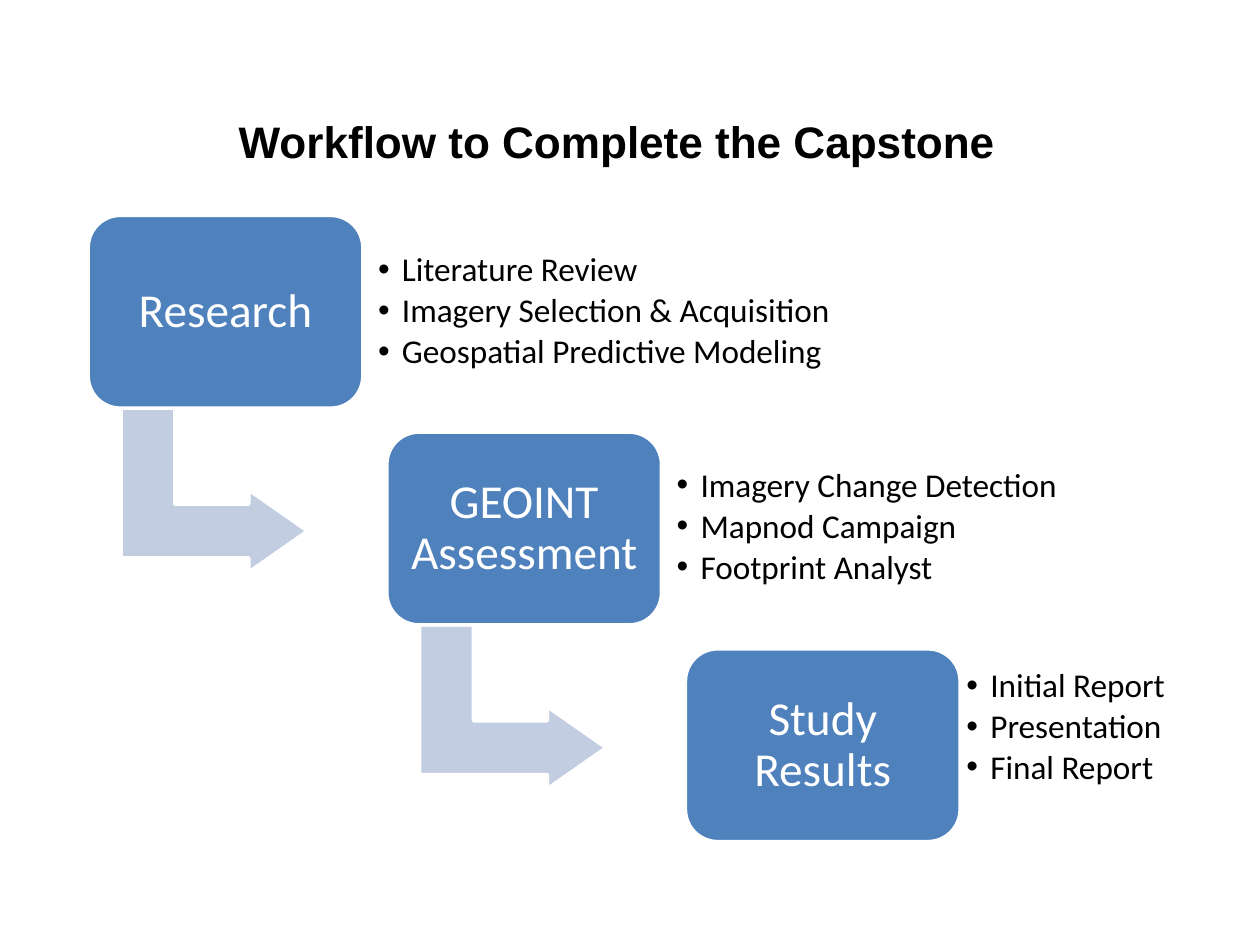
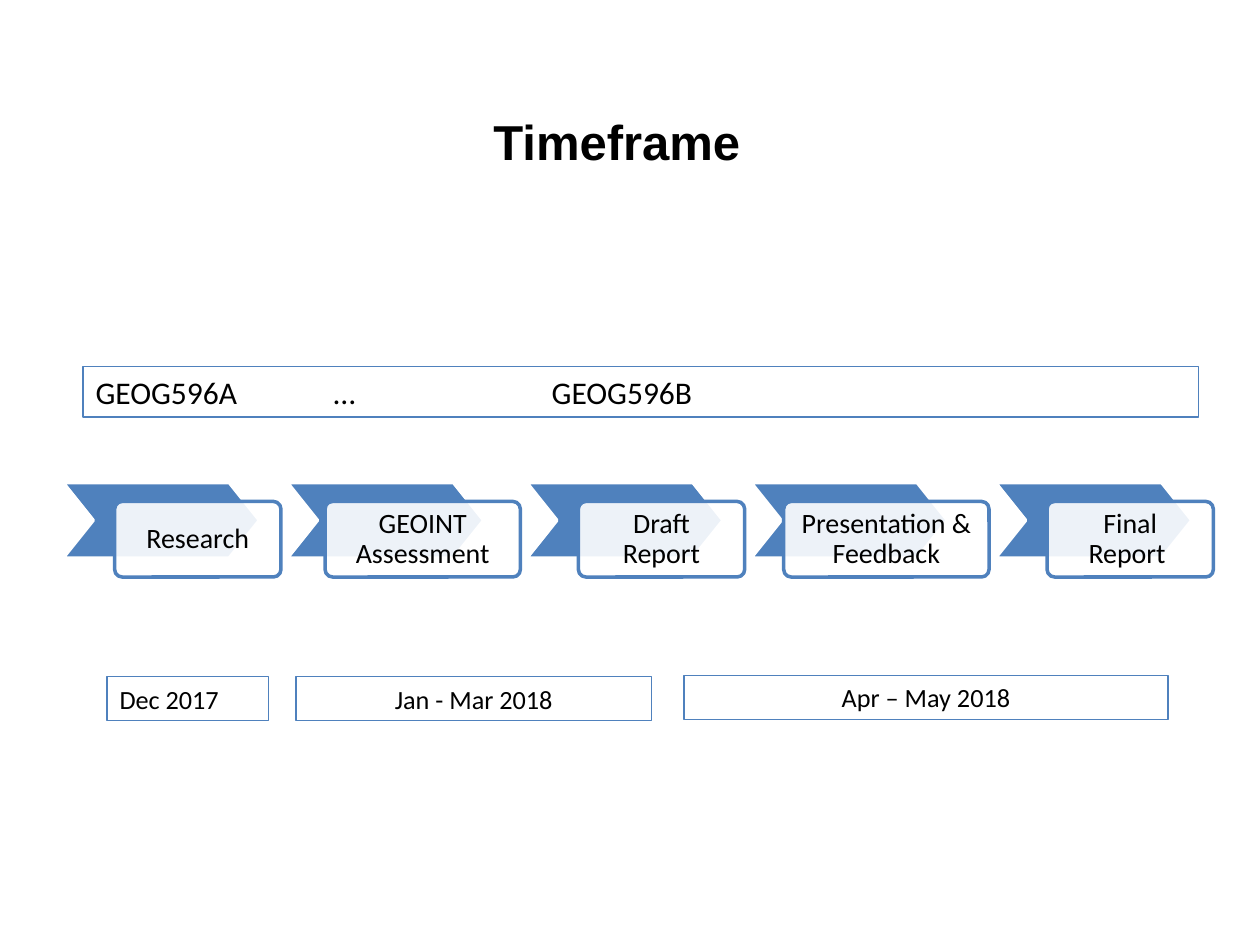
from lxml import etree
from pptx import Presentation
from pptx import util as u
from pptx.dml.color import RGBColor
from pptx.enum import shapes, text
from pptx.oxml.ns import qn

PX = 9144  # EMU in one px, 100 px to the inch
BLUE, PALE_BLUE, WHITE, BLACK = "4F81BD", "C2CDE1", "FFFFFF", "000000"
TITLE_ONLY, COMPARISON = 5, 4
KIND = shapes.MSO_SHAPE
CENTER, LEFT = text.PP_ALIGN.CENTER, text.PP_ALIGN.LEFT
MIDDLE, TOP = text.MSO_ANCHOR.MIDDLE, text.MSO_ANCHOR.TOP


def color(hex_value):
    return RGBColor.from_string(hex_value)


def write(frame, lines, size=16, font="Calibri", ink=BLACK, bold=False, align=CENTER,
          anchor=MIDDLE, insets=(10, 5), spacing=1.0, after=0, bullet=None, tabs=()):
    """Fill a text frame with one paragraph per line; insets are (sides, top and bottom)."""
    frame.word_wrap = True
    frame.auto_size = text.MSO_AUTO_SIZE.NONE
    frame.vertical_anchor = anchor
    frame.margin_left = frame.margin_right = insets[0] * PX
    frame.margin_top = frame.margin_bottom = insets[1] * PX
    for number, line in enumerate(lines):
        paragraph = frame.add_paragraph() if number else frame.paragraphs[0]
        props = paragraph._p.get_or_add_pPr()
        if bullet:
            props.set("marL", str(19 * PX))
            props.set("indent", str(-19 * PX))
            etree.SubElement(props, qn("a:buFont"), typeface="Arial")
            etree.SubElement(props, qn("a:buChar"), char=bullet)
        if tabs:
            stops = etree.SubElement(props, qn("a:tabLst"))
            for stop in tabs:
                etree.SubElement(stops, qn("a:tab"), pos=str(stop * PX), algn="l")
        paragraph.alignment = align
        paragraph.line_spacing = spacing
        paragraph.space_before = u.Pt(0)
        paragraph.space_after = u.Pt(after)
        run = paragraph.add_run()
        run.text = line
        run.font.size, run.font.name, run.font.bold = u.Pt(size), font, bold
        run.font.color.rgb = color(ink)


class Deck:
    def __init__(self):
        self.prs = Presentation()
        self.prs.slide_width, self.prs.slide_height = 1000 * PX, 750 * PX
        self.slide = None

    def start(self, layout, title, size):
        self.slide = self.prs.slides.add_slide(self.prs.slide_layouts[layout])
        heading = self.slide.shapes.title
        self.place(heading, 152, 68, 675, 88)
        write(heading.text_frame, [title], size=size, font="Arial", bold=True)

    def place(self, shape, *box):
        shape.left, shape.top, shape.width, shape.height = (side * PX for side in box)

    def shape(self, kind, box, fill=None, line=WHITE, weight=2, adjust=(), opacity=100):
        shape = self.slide.shapes.add_shape(kind, *(side * PX for side in box))
        shape.shadow.inherit = False
        for index, value in enumerate(adjust):
            shape.adjustments[index] = value
        if fill:
            shape.fill.solid()
            shape.fill.fore_color.rgb = color(fill)
            if opacity < 100:
                tint = shape.fill._xPr.find(".//" + qn("a:srgbClr"))
                etree.SubElement(tint, qn("a:alpha"), val=str(opacity * 1000))
        else:
            shape.fill.background()
        shape.line.color.rgb = color(line)
        shape.line.width = u.Pt(weight)
        return shape

    def bullets(self, index, box, items, inset):
        body = self.slide.placeholders[index]
        self.place(body, *box)
        write(body.text_frame, items, size=19, align=LEFT, insets=(inset, inset),
              spacing=0.9, after=2.85, bullet="•")

    def bent_arrow(self, left, top):
        arrow = self.shape(KIND.BENT_UP_ARROW, (left, top, 130, 148), PALE_BLUE,
                           adjust=(0.328, 0.25, 0.358))
        arrow.rotation = 90

    def stage(self, left, top, label):
        box = self.shape(KIND.ROUNDED_RECTANGLE, (left, top, 218, 153), BLUE,
                         adjust=(0.167,))
        write(box.text_frame, [label], size=27, ink=WHITE, insets=(11, 11), spacing=0.9)

    def milestone(self, chevron_left, width, label):
        """Draw a chevron with its label box and return the right edge of the box."""
        self.shape(KIND.CHEVRON, (chevron_left, 383, 156, 60), BLUE, adjust=(0.4,))
        left = chevron_left + 107 - width // 2
        box = self.shape(KIND.ROUNDED_RECTANGLE, (left, 398, width, 60), WHITE, BLUE,
                         adjust=(0.1,), opacity=90)
        write(box.text_frame, [label], insets=(12, 12), spacing=0.9)
        return left + width

    def period(self, box, label, **style):
        frame = self.shape(KIND.RECTANGLE, box, line=BLUE, weight=0.75).text_frame
        write(frame, [label], anchor=TOP, **style)

    def drop_empty_placeholders(self):
        for holder in list(self.slide.placeholders):
            if not holder.text_frame.text:
                holder._element.getparent().remove(holder._element)


def build_workflow(deck):
    deck.start(COMPARISON, "Workflow to Complete the Capstone", 25.2)
    stages = [
        ("Research", (290, 186, 390, 123), 10,
         ["Literature Review", "Imagery Selection & Acquisition",
          "Geospatial Predictive Modeling"]),
        ("GEOINT Assessment", (527, 357, 338, 123), 10,
         ["Imagery Change Detection", "Mapnod Campaign", "Footprint Analyst"]),
        ("Study Results", (759, 516, 197, 123), 8,
         ["Initial Report", "Presentation", "Final Report"]),
    ]
    for step, (label, list_box, inset, tasks) in enumerate(stages):
        left, top = 70 + 237 * step, 171 + 172 * step
        if step < len(stages) - 1:
            deck.bent_arrow(left + 35, top + 144)
        deck.stage(left, top, label)
        deck.bullets(step + 1, list_box, tasks, inset)
    deck.drop_empty_placeholders()


def build_timeframe(deck):
    deck.start(TITLE_ONLY, "Timeframe", 28)
    milestones = [("Research", 132), ("GEOINT Assessment", 155), ("Draft Report", 132),
                  ("Presentation & Feedback", 163), ("Final Report ", 132)]
    chevron_left = 50
    for label, width in milestones:
        chevron_left = deck.milestone(chevron_left, width, label) + 5
    deck.period((66, 291, 885, 40), "GEOG596A\t…\tGEOG596B", size=18, align=LEFT,
                tabs=(189, 362))
    deck.period((85, 537, 128, 35), "Dec 2017", size=15, align=LEFT)
    deck.period((235, 537, 282, 35), "Jan - Mar 2018", size=15)
    deck.period((543, 536, 384, 35), "Apr – May 2018", size=15)


def main():
    deck = Deck()
    build_workflow(deck)
    build_timeframe(deck)
    deck.prs.save("out.pptx")


if __name__ == "__main__":
    main()
